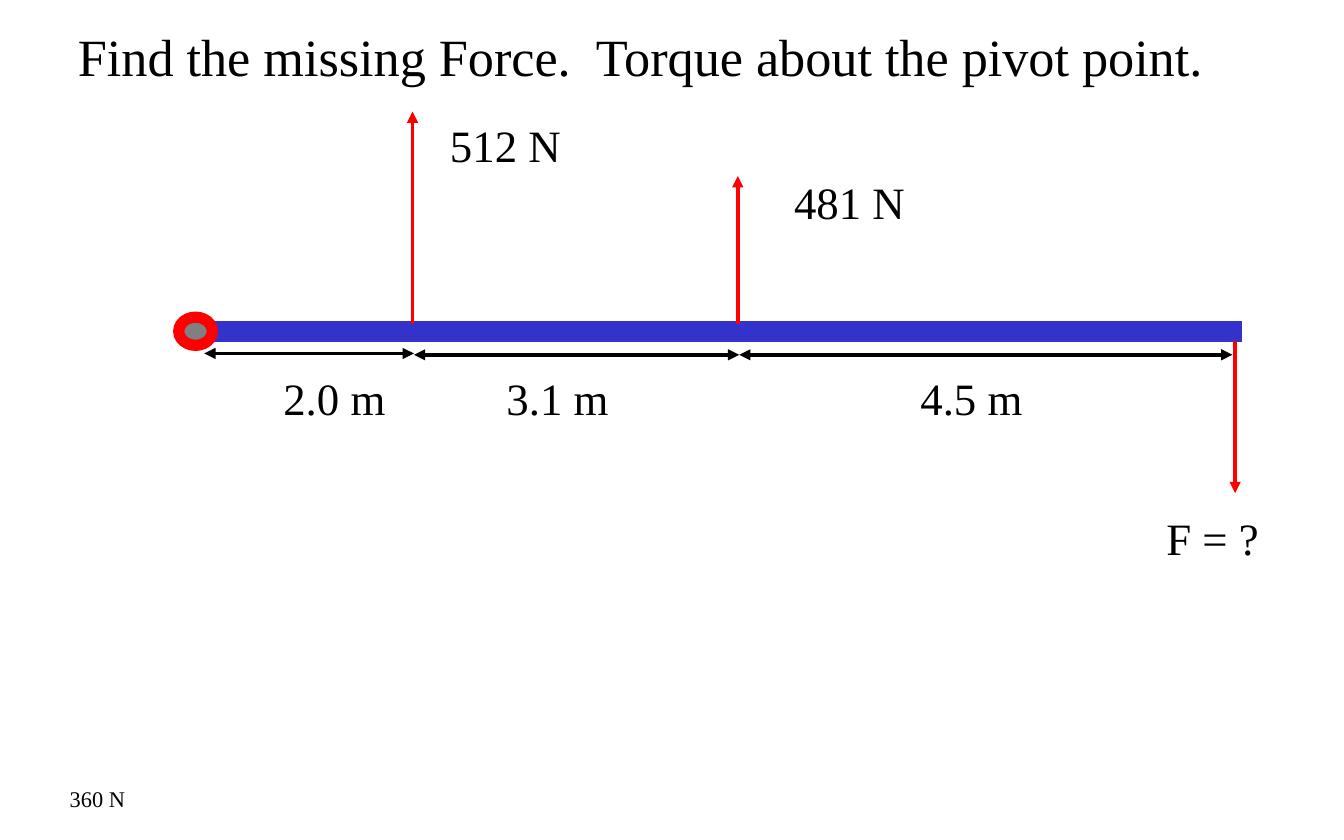
from typing import NamedTuple

from lxml.etree import SubElement
from pptx import Presentation
from pptx.dml.color import RGBColor
from pptx.enum.shapes import MSO_CONNECTOR, MSO_SHAPE
from pptx.enum.text import MSO_ANCHOR, MSO_AUTO_SIZE, PP_ALIGN
from pptx.oxml.ns import qn
from pptx.util import Inches, Pt

COLORS = {
    "text": "000000",
    "force": "FF0000",
    "beam": "3333CC",
    "core": "808080",
    "distance": "000000",
}
FONT = "Times New Roman"


class Arrow(NamedTuple):
    start: tuple[float, float]
    end: tuple[float, float]
    color: str
    double: bool = False


class Label(NamedTuple):
    text: str
    left: float
    top: float
    width: float
    height: float = 0.5
    size: int = 24


ARROWS = [
    Arrow((3.07, 2.41), (3.07, 0.83), "force"),
    Arrow((5.49, 2.41), (5.49, 1.31), "force"),
    Arrow((9.19, 2.54), (9.19, 3.67), "force"),
    Arrow((1.52, 2.63), (3.08, 2.63), "distance", True),
    Arrow((3.08, 2.64), (5.5, 2.64), "distance", True),
    Arrow((5.5, 2.64), (9.17, 2.64), "distance", True),
]

LABELS = [
    Label("512 N", 3.25, 0.83, 1.03),
    Label("481 N", 5.81, 1.25, 1.03),
    Label("F = ?", 8.58, 3.75, 0.9),
    Label("2.0 m", 2.01, 2.71, 0.97),
    Label("3.1 m", 3.67, 2.71, 0.97),
    Label("4.5 m", 6.75, 2.71, 0.97),
    Label("360 N", 0.42, 5.79, 0.62, 0.3, 12),
]


def rgb(name: str) -> RGBColor:
    return RGBColor.from_string(COLORS[name])


def write_text(box, text: str, *, size: int, color: str = "text") -> None:
    frame = box.text_frame
    frame.word_wrap = False
    frame.auto_size = MSO_AUTO_SIZE.NONE
    frame.vertical_anchor = MSO_ANCHOR.TOP
    para = frame.paragraphs[0]
    para.alignment = PP_ALIGN.LEFT
    span = para.add_run()
    span.text = text
    span.font.name = FONT
    span.font.size = Pt(size)
    span.font.color.rgb = rgb(color)


def draw_title(page, label: Label) -> None:
    title = page.shapes.title
    title.left, title.top = Inches(label.left), Inches(label.top)
    title.width, title.height = Inches(label.width), Inches(label.height)
    write_text(title, label.text, size=label.size)


def draw_label(page, label: Label) -> None:
    box = page.shapes.add_textbox(
        Inches(label.left), Inches(label.top), Inches(label.width), Inches(label.height)
    )
    write_text(box, label.text, size=label.size)


def draw_outlined(page, kind, left: float, top: float, width: float, height: float, color: str) -> None:
    shape = page.shapes.add_shape(kind, Inches(left), Inches(top), Inches(width), Inches(height))
    shape.shadow.inherit = False
    shape.fill.solid()
    shape.fill.fore_color.rgb = rgb("core")
    shape.line.color.rgb = rgb(color)
    shape.line.width = Pt(6)
    SubElement(shape.line._get_or_add_ln(), qn("a:miter"), lim="800000")


def draw_arrow(page, arrow: Arrow) -> None:
    points = [Inches(value) for value in (*arrow.start, *arrow.end)]
    line = page.shapes.add_connector(MSO_CONNECTOR.STRAIGHT, *points)
    line.line.color.rgb = rgb(arrow.color)
    line.line.width = Pt(2)
    outline = line.line._get_or_add_ln()
    for end in ("headEnd", "tailEnd") if arrow.double else ("tailEnd",):
        SubElement(outline, qn(f"a:{end}"), type="triangle")
    SubElement(line._element.spPr, qn("a:effectLst"))


def main() -> None:
    deck = Presentation()
    deck.slide_width, deck.slide_height = Inches(10), Inches(6.25)
    page = deck.slides.add_slide(deck.slide_layouts[5])
    draw_title(page, Label(
        "Find the missing Force.  Torque about the pivot point.", 0.48, 0.13, 8.66, 0.57, 28
    ))
    draw_outlined(page, MSO_SHAPE.RECTANGLE, 1.53, 2.43, 7.67, 0.07, "beam")
    draw_outlined(page, MSO_SHAPE.OVAL, 1.33, 2.36, 0.25, 0.21, "force")
    for arrow in ARROWS:
        draw_arrow(page, arrow)
    for label in LABELS:
        draw_label(page, label)
    deck.save("out.pptx")


if __name__ == "__main__":
    main()
